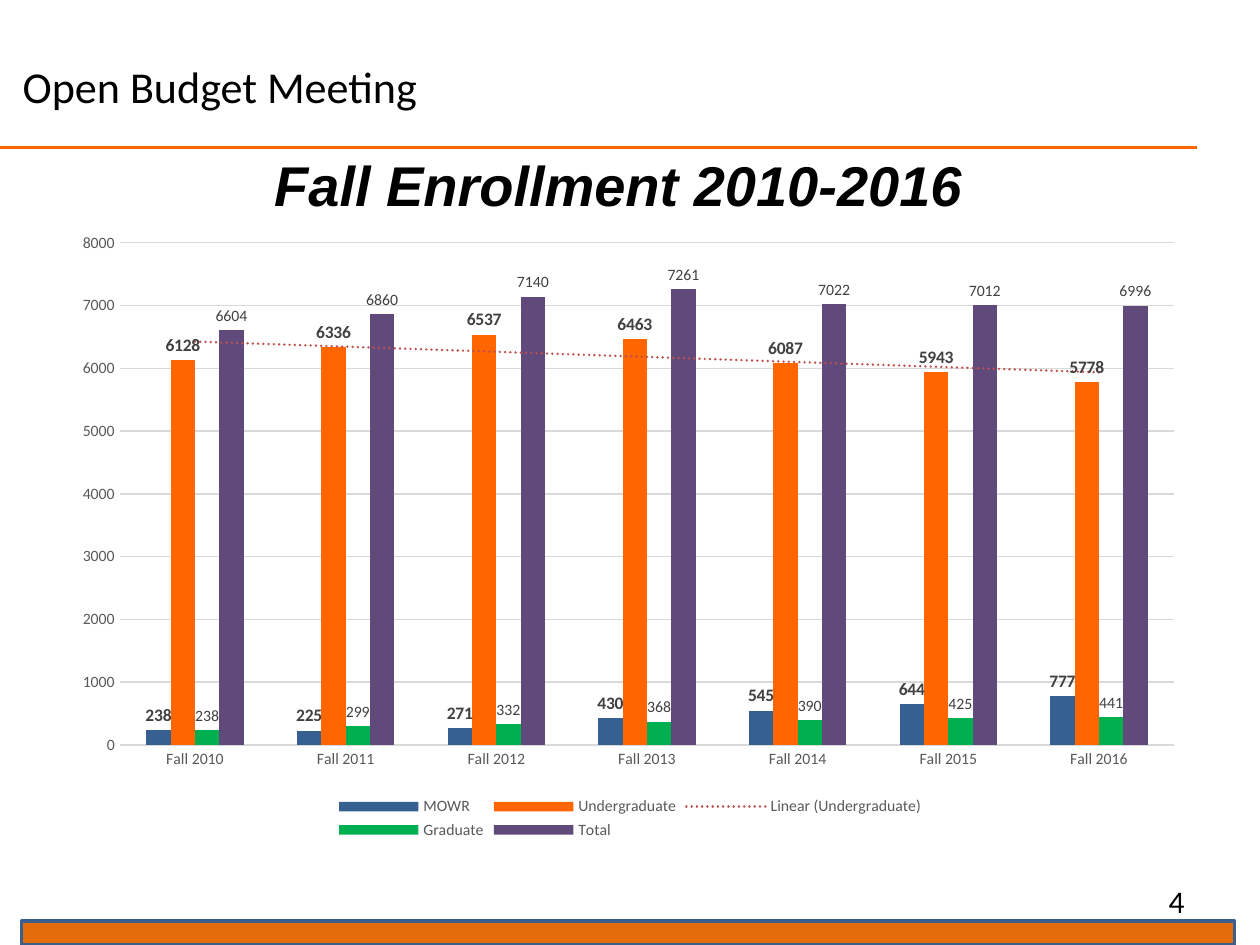
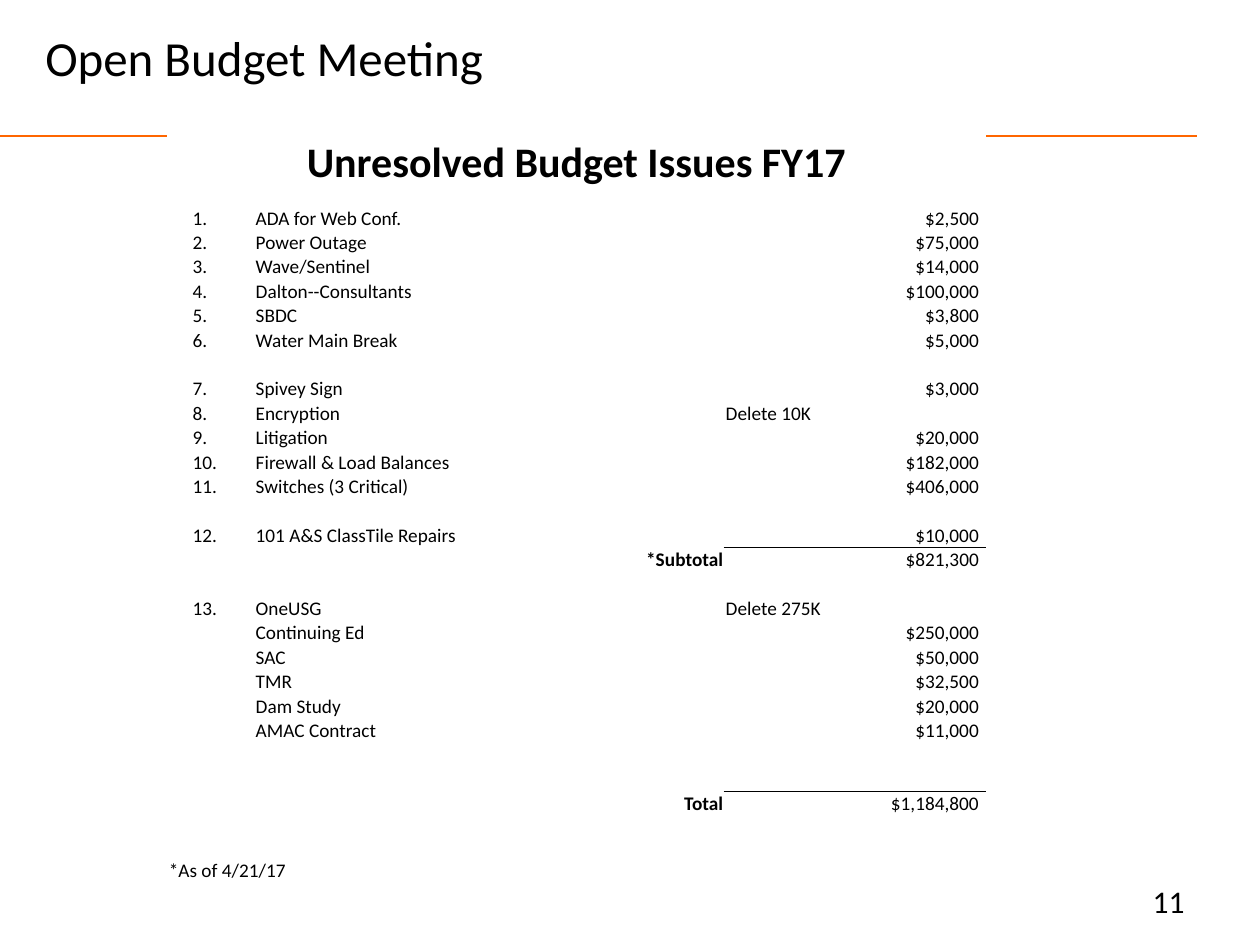
from dataclasses import dataclass

from lxml import etree
from pptx import Presentation
from pptx.chart.data import CategoryChartData
from pptx.dml.color import RGBColor
from pptx.enum.chart import XL_CHART_TYPE, XL_LABEL_POSITION, XL_LEGEND_POSITION, XL_TICK_MARK
from pptx.enum.shapes import MSO_CONNECTOR, MSO_SHAPE
from pptx.enum.text import MSO_ANCHOR, PP_ALIGN
from pptx.oxml import parse_xml
from pptx.oxml.ns import nsdecls, qn
from pptx.util import Inches, Pt

LEFT, CENTER, RIGHT = PP_ALIGN.LEFT, PP_ALIGN.CENTER, PP_ALIGN.RIGHT
TOP, MIDDLE, BOTTOM = MSO_ANCHOR.TOP, MSO_ANCHOR.MIDDLE, MSO_ANCHOR.BOTTOM
COLUMN = XL_CHART_TYPE.COLUMN_CLUSTERED
OUTSIDE_END = XL_LABEL_POSITION.OUTSIDE_END
LEGEND_BOTTOM = XL_LEGEND_POSITION.BOTTOM
NO_TICK = XL_TICK_MARK.NONE
STRAIGHT = MSO_CONNECTOR.STRAIGHT
RECTANGLE = MSO_SHAPE.RECTANGLE


@dataclass(frozen=True)
class Theme:
    body: str = "Calibri"
    display: str = "Arial"
    ink: str = "000000"
    orange: str = "FF6600"
    band: str = "E46C0A"
    band_line: str = "3A5F8C"
    grid: str = "D9D9D9"
    axis_text: str = "595959"
    label_text: str = "404040"
    trend: str = "C0504D"
    heading: float = 32
    table_heading: float = 24
    page: float = 18
    cell: float = 11
    label: float = 10
    axis: float = 9


T = Theme()

TERMS = [f"Fall {year}" for year in range(2010, 2017)]
ENROLLMENT = [
    ("MOWR", "376092", True, (238, 225, 271, 430, 545, 644, 777)),
    ("Undergraduate", T.orange, True, (6128, 6336, 6537, 6463, 6087, 5943, 5778)),
    ("Graduate", "00B050", False, (238, 299, 332, 368, 390, 425, 441)),
    ("Total", "604A7B", False, (6604, 6860, 7140, 7261, 7022, 7012, 6996)),
]

BLANK = ("", "", "")
ISSUES = [
    ("1.", "ADA for Web Conf.", "$2,500"),
    ("2.", "Power Outage", "$75,000"),
    ("3.", "Wave/Sentinel", "$14,000"),
    ("4.", "Dalton--Consultants", "$100,000"),
    ("5.", "SBDC", "$3,800"),
    ("6.", "Water Main Break", "$5,000"),
    BLANK,
    ("7.", "Spivey Sign", "$3,000"),
    ("8.", "Encryption", "Delete 10K"),
    ("9.", "Litigation", "$20,000"),
    ("10.", "Firewall & Load Balances", "$182,000"),
    ("11.", "Switches (3 Critical)", "$406,000"),
    BLANK,
    ("12.", "101 A&S ClassTile Repairs", "$10,000"),
    ("", "*Subtotal", "$821,300"),
    BLANK,
    ("13.", "OneUSG", "Delete 275K"),
    ("", "Continuing Ed", "$250,000"),
    ("", "SAC", "$50,000"),
    ("", "TMR", "$32,500"),
    ("", "Dam Study", "$20,000"),
    ("", "AMAC Contract", "$11,000"),
    BLANK,
    BLANK,
    ("", "Total", "$1,184,800"),
]
SUMS = ("*Subtotal", "Total")


def rgb(value):
    return RGBColor.from_string(value)


def set_font(font, size, color=T.ink, name=T.body, bold=False, italic=False):
    values = {"size": Pt(size), "name": name, "bold": bold, "italic": italic}
    for key, value in values.items():
        setattr(font, key, value)
    font.color.rgb = rgb(color)


def set_line(line, color, width):
    line.color.rgb = rgb(color)
    line.width = Pt(width)


def add_text(s, box, text, align=LEFT, anchor=TOP, indent=0.1, **font):
    sp = s.shapes.add_textbox(*map(Inches, box))
    tf = sp.text_frame
    values = {"word_wrap": True, "vertical_anchor": anchor, "margin_left": Inches(indent)}
    for key, value in values.items():
        setattr(tf, key, value)
    p = tf.paragraphs[0]
    p.alignment = align
    r = p.add_run()
    r.text = text
    set_font(r.font, **font)


def add_frame(s, title_box, title_size, indent, rule_y, page):
    rule = s.shapes.add_connector(STRAIGHT, 0, Inches(rule_y), Inches(9.5), Inches(rule_y))
    set_line(rule.line, T.orange, 1.5)
    etree.SubElement(rule._element.spPr, qn("a:effectLst"))
    add_text(s, (7.17, 6.95, 2.33, 0.4), page, RIGHT, size=T.page)
    add_text(s, title_box, "Open Budget Meeting", indent=indent, size=title_size)


def add_bottom_band(s, box):
    sp = s.shapes.add_shape(RECTANGLE, *map(Inches, box))
    sp.shadow.inherit = False
    sp.fill.solid()
    sp.fill.fore_color.rgb = rgb(T.band)
    set_line(sp.line, T.band_line, 2)


def add_trend(series):
    series.data_labels._element.addnext(parse_xml(
        f'<c:trendline {nsdecls("c", "a")}><c:spPr><a:ln w="{Pt(1.5)}" cap="rnd">'
        f'<a:solidFill><a:srgbClr val="{T.trend}"/></a:solidFill>'
        '<a:prstDash val="sysDot"/></a:ln></c:spPr><c:trendlineType val="linear"/>'
        '<c:dispRSqr val="0"/><c:dispEq val="0"/></c:trendline>'))


def set_plot_layout(chart, x, y, w, h):
    area = chart._chartSpace.chart.plotArea
    for old in area.findall(qn("c:layout")):
        area.remove(old)
    sizes = "".join(f'<c:{key} val="{value}"/>' for key, value in zip("xywh", (x, y, w, h)))
    area.insert(0, parse_xml(
        f'<c:layout {nsdecls("c")}><c:manualLayout><c:layoutTarget val="inner"/>'
        f'<c:xMode val="edge"/><c:yMode val="edge"/>{sizes}</c:manualLayout></c:layout>'))


def style_axes(chart):
    for axis in (chart.category_axis, chart.value_axis):
        axis.major_tick_mark = axis.minor_tick_mark = NO_TICK
        set_font(axis.tick_labels.font, T.axis, T.axis_text)
    set_line(chart.category_axis.format.line, T.grid, 0.75)
    values = chart.value_axis
    values.minimum_scale, values.maximum_scale, values.major_unit = 0, 8000, 1000
    values.format.line.fill.background()
    set_line(values.major_gridlines.format.line, T.grid, 0.75)


def add_enrollment_chart(s, box):
    data = CategoryChartData()
    data.categories = TERMS
    for name, _, _, counts in ENROLLMENT:
        data.add_series(name, counts)
    chart = s.shapes.add_chart(COLUMN, *map(Inches, box), data).chart
    set_font(chart.font, T.label)
    chart.has_title = False
    chart.has_legend = True
    chart.legend.position = LEGEND_BOTTOM
    chart.legend.include_in_layout = False
    set_font(chart.legend.font, T.axis, T.axis_text)
    style_axes(chart)
    plot = chart.plots[0]
    plot.gap_width, plot.overlap, plot.vary_by_categories = 219, 0, False
    for series, (name, color, strong, _) in zip(plot.series, ENROLLMENT):
        series.format.fill.solid()
        series.format.fill.fore_color.rgb = rgb(color)
        labels = series.data_labels
        labels.show_value = True
        labels.position = OUTSIDE_END
        set_font(labels.font, T.label if strong else T.axis, T.label_text, bold=strong)
        if name == "Undergraduate":
            add_trend(series)
    set_plot_layout(chart, 0.05, 0.03, 0.93, 0.81)


def fill_cell(cell, text, size=T.cell, align=LEFT, bold=False, right=0.01):
    margin = Inches(0.01)
    values = {"margin_left": margin, "margin_top": margin, "margin_right": Inches(right),
              "margin_bottom": 0, "vertical_anchor": BOTTOM}
    for key, value in values.items():
        setattr(cell, key, value)
    cell.fill.background()
    p = cell.text_frame.paragraphs[0]
    p.alignment = align
    if text:
        r = p.add_run()
        r.text = text
        set_font(r.font, size, bold=bold)
    else:
        etree.SubElement(p._p, qn("a:endParaRPr"), sz=str(int(size * 100)))


def add_border(cell, side):
    cell._tc.get_or_add_tcPr().insert(0, parse_xml(
        f'<a:ln{side} {nsdecls("a")} w="{Pt(0.5)}"><a:solidFill>'
        f'<a:srgbClr val="{T.ink}"/></a:solidFill></a:ln{side}>'))


def add_issues_table(s, left, top):
    widths = (0.19, 0.5, 3.73, 2.07)
    heights = [0.42, 0.13] + [0.19] * len(ISSUES) + [0.17, 0.17, 0.19]
    count = len(heights)
    frame = s.shapes.add_table(count, len(widths), Inches(left), Inches(top),
                               Inches(sum(widths)), Inches(sum(heights)))
    table = frame.table
    table.first_row = table.horz_banding = False
    for column, width in zip(table.columns, widths):
        column.width = Inches(width)
    for row, height in zip(table.rows, heights):
        row.height = Inches(height)

    table.cell(0, 0).merge(table.cell(0, 3))
    table.cell(count - 1, 0).merge(table.cell(count - 1, 2))
    fill_cell(table.cell(0, 0), "Unresolved Budget Issues FY17", T.table_heading, CENTER, True)
    fill_cell(table.cell(count - 1, 0), "*As of 4/21/17")
    fill_cell(table.cell(count - 1, 3), "")
    for row, size in ((1, 7), (count - 3, 9), (count - 2, 9)):
        for column in range(len(widths)):
            fill_cell(table.cell(row, column), "", size)

    for row, (number, item, amount) in enumerate(ISSUES, 2):
        is_sum = item in SUMS
        is_money = amount.startswith("$")
        fill_cell(table.cell(row, 0), "")
        fill_cell(table.cell(row, 1), number)
        fill_cell(table.cell(row, 2), item, align=RIGHT if is_sum else LEFT, bold=is_sum)
        fill_cell(table.cell(row, 3), amount, align=RIGHT if is_money else LEFT,
                  right=0.05 if is_money else 0.01)
        if is_sum:
            add_border(table.cell(row - 1, 3), "B")
            add_border(table.cell(row, 3), "T")


def build_enrollment_slide(s):
    add_frame(s, (0, 0.42, 6.08, 0.5), 25.2, 0.18, 1.17, "4")
    add_bottom_band(s, (0.17, 7.31, 9.63, 0.19))
    add_text(s, (0.41, 1.26, 9, 0.4), "Fall Enrollment 2010-2016", CENTER, MIDDLE,
             size=T.heading, name=T.display, bold=True, italic=True)
    add_enrollment_chart(s, (0.5, 1.78, 9, 4.92))


def build_issues_slide(s):
    add_frame(s, (0, 0.17, 5.5, 0.75), 28, 0.36, 1.08, "11")
    add_issues_table(s, 1.33, 1.08)


def main():
    prs = Presentation()
    prs.slide_width, prs.slide_height = Inches(10), Inches(7.5)
    for build in (build_enrollment_slide, build_issues_slide):
        build(prs.slides.add_slide(prs.slide_layouts[6]))
    prs.save("out.pptx")


if __name__ == "__main__":
    main()
